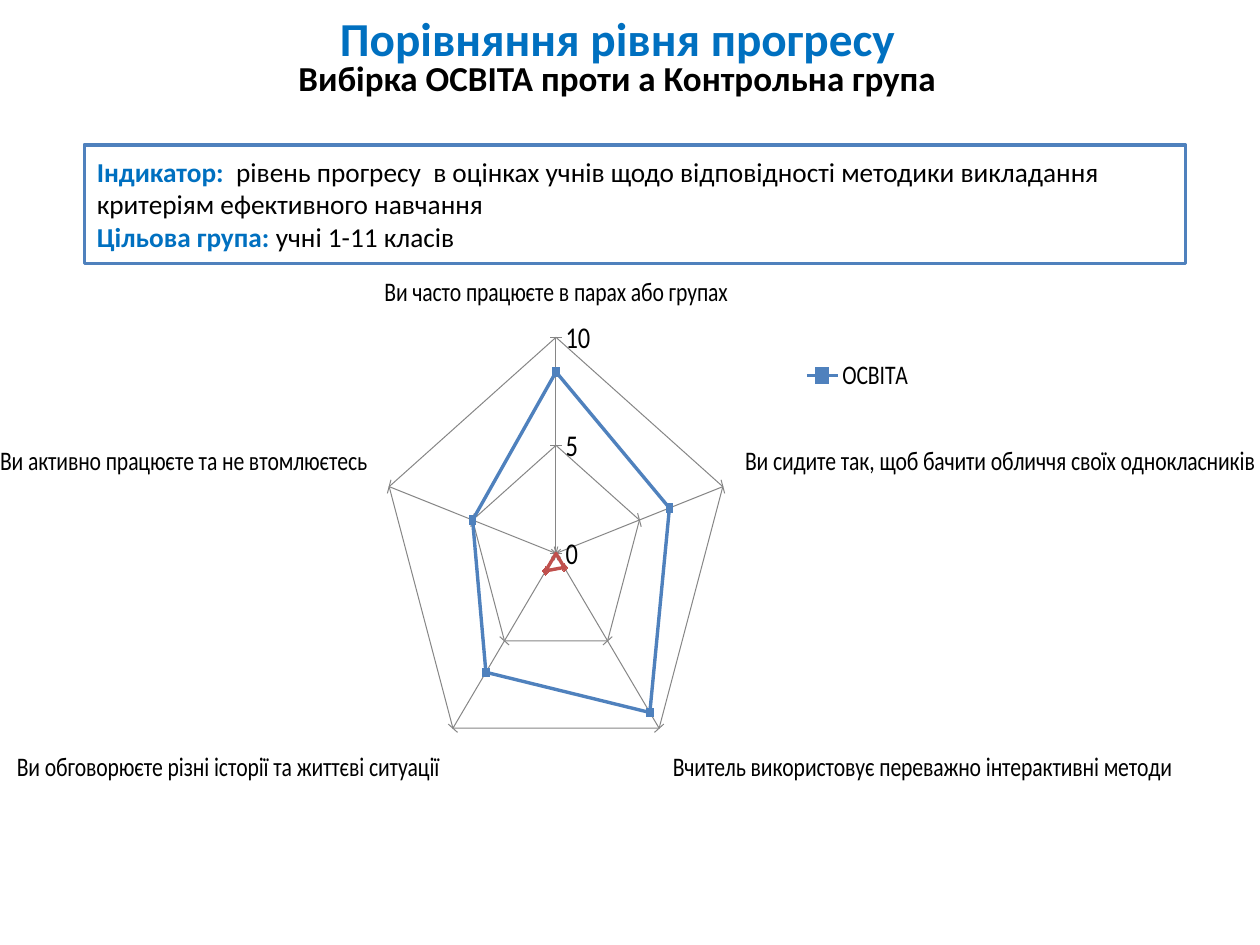
from lxml import etree
from pptx import Presentation
from pptx.chart.data import CategoryChartData
from pptx.dml.color import RGBColor
from pptx.enum.chart import XL_CHART_TYPE, XL_LEGEND_POSITION
from pptx.enum.shapes import MSO_SHAPE
from pptx.enum.text import MSO_ANCHOR, MSO_AUTO_SIZE, PP_ALIGN
from pptx.oxml.ns import qn
from pptx.util import Inches, Pt

RADAR = XL_CHART_TYPE.RADAR_MARKERS
RIGHT = XL_LEGEND_POSITION.RIGHT
RECT = MSO_SHAPE.RECTANGLE
MIDDLE = MSO_ANCHOR.MIDDLE
FIXED = MSO_AUTO_SIZE.NONE
LEFT, CENTER = PP_ALIGN.LEFT, PP_ALIGN.CENTER

FONT = "Calibri"
COLORS = {
    "head": "0070C0", "text": "000000", "back": "FFFFFF",
    "blue": "4F81BD", "red": "C0504D", "grid": "868686",
}
TOPICS = [
    "Ви часто працюєте в парах або групах",
    "Ви сидите так, щоб бачити обличчя своїх однокласників",
    "Вчитель використовує переважно інтерактивні методи",
    "Ви обговорюєте різні історії та життєві ситуації",
    "Ви активно працюєте та не втомлюєтесь",
]
GROUPS = [
    ("ОСВІТА", "blue", [8.4, 6.8, 9.1, 6.8, 5]),
    ("Контрольна група", "red", [-0.3, -0.5, 0.8, 1, -1.3]),
]


def color(name):
    return RGBColor.from_string(COLORS[name])


def style(font, size, tint="text", bold=False):
    font.name, font.size, font.bold = FONT, Pt(size), bold
    font.color.rgb = color(tint)


def stroke(line, tint, width):
    line.color.rgb = color(tint)
    line.width = Pt(width)


def place(shape, left, top, width, height):
    shape.left, shape.top = Inches(left), Inches(top)
    shape.width, shape.height = Inches(width), Inches(height)


def write(para, lines):
    """Fill a paragraph with lines of (text, size, tint, bold) runs."""
    for row, runs in enumerate(lines):
        if row:
            para.add_line_break()
        for text, *look in runs:
            run = para.add_run()
            run.text = text
            style(run.font, *look)


def pin(node, spot, box, inner=False):
    """Give a chart part a manual layout, in shares of the chart's size."""
    for old in node.findall(qn("c:layout")):
        node.remove(old)
    layout = etree.Element(qn("c:layout"))
    manual = etree.SubElement(layout, qn("c:manualLayout"))
    marks = [("layoutTarget", "inner")] if inner else []
    marks += [("xMode", "edge"), ("yMode", "edge")]
    marks += zip("xywh", box)
    for tag, value in marks:
        etree.SubElement(manual, qn("c:" + tag)).set("val", str(value))
    node.insert(spot, layout)


def add_title(slide):
    title = slide.shapes.title
    place(title, 0, 0, 9.8, 0.94)
    frame = title.text_frame
    frame.auto_size, frame.vertical_anchor = FIXED, MIDDLE
    para = frame.paragraphs[0]
    para.alignment, para.line_spacing = CENTER, 0.8
    write(para, [
        [("Порівняння рівня прогресу", 27, "head", True)],
        [("Вибірка ОСВІТА проти а Контрольна група", 20, "text", True)],
    ])


def add_note(slide):
    note = slide.shapes.add_shape(RECT, 0, 0, 0, 0)
    place(note, 0.67, 1.15, 8.74, 0.94)
    note.shadow.inherit = False
    note.fill.solid()
    note.fill.fore_color.rgb = color("back")
    stroke(note.line, "blue", 2)
    frame = note.text_frame
    frame.word_wrap, frame.vertical_anchor = True, MIDDLE
    para = frame.paragraphs[0]
    para.alignment = LEFT
    size = 15.6
    write(para, [
        [("Індикатор:  ", size, "head", True),
         ("рівень прогресу  в оцінках учнів щодо відповідності методики "
          "викладання критеріям ефективного навчання", size)],
        [("Цільова група: ", size, "head", True),
         ("учні 1-11 класів", size)],
    ])


def add_radar(slide):
    data = CategoryChartData()
    data.categories = TOPICS
    for name, _, values in GROUPS:
        data.add_series(name, values)
    frame = slide.shapes.add_chart(
        RADAR, 0, Inches(2.19), Inches(10), Inches(5.28), data)
    chart = frame.chart
    chart.has_title = False
    style(chart.font, 18)

    for series, (_, tint, _) in zip(chart.plots[0].series, GROUPS):
        series.smooth = False
        stroke(series.format.line, tint, 2.5)
        mark = series.marker
        mark.size = 5
        mark.format.fill.solid()
        mark.format.fill.fore_color.rgb = color(tint)
        stroke(mark.format.line, tint, 0.75)

    scale, topics = chart.value_axis, chart.category_axis
    scale.minimum_scale, scale.maximum_scale, scale.major_unit = 0, 10, 5
    for axis in (scale, topics):
        axis.has_major_gridlines = True
        stroke(axis.major_gridlines.format.line, "grid", 0.75)
        stroke(axis.format.line, "grid", 0.75)
    style(scale.tick_labels.font, 18)
    style(topics.tick_labels.font, 16)

    chart.has_legend = True
    legend = chart.legend
    legend.position, legend.include_in_layout = RIGHT, False
    style(legend.font, 16)
    area = chart.element.find(".//" + qn("c:plotArea"))
    key = chart.element.find(".//" + qn("c:legend"))
    pin(area, 0, (0.06, 0.05, 0.94, 0.68), inner=True)
    pin(key, 1, (0.76, 0.04, 0.2, 0.14))


def main():
    deck = Presentation()
    deck.slide_width, deck.slide_height = Inches(10), Inches(7.5)
    slide = deck.slides.add_slide(deck.slide_layouts[5])
    add_radar(slide)
    add_note(slide)
    add_title(slide)
    deck.save("out.pptx")


if __name__ == "__main__":
    main()
